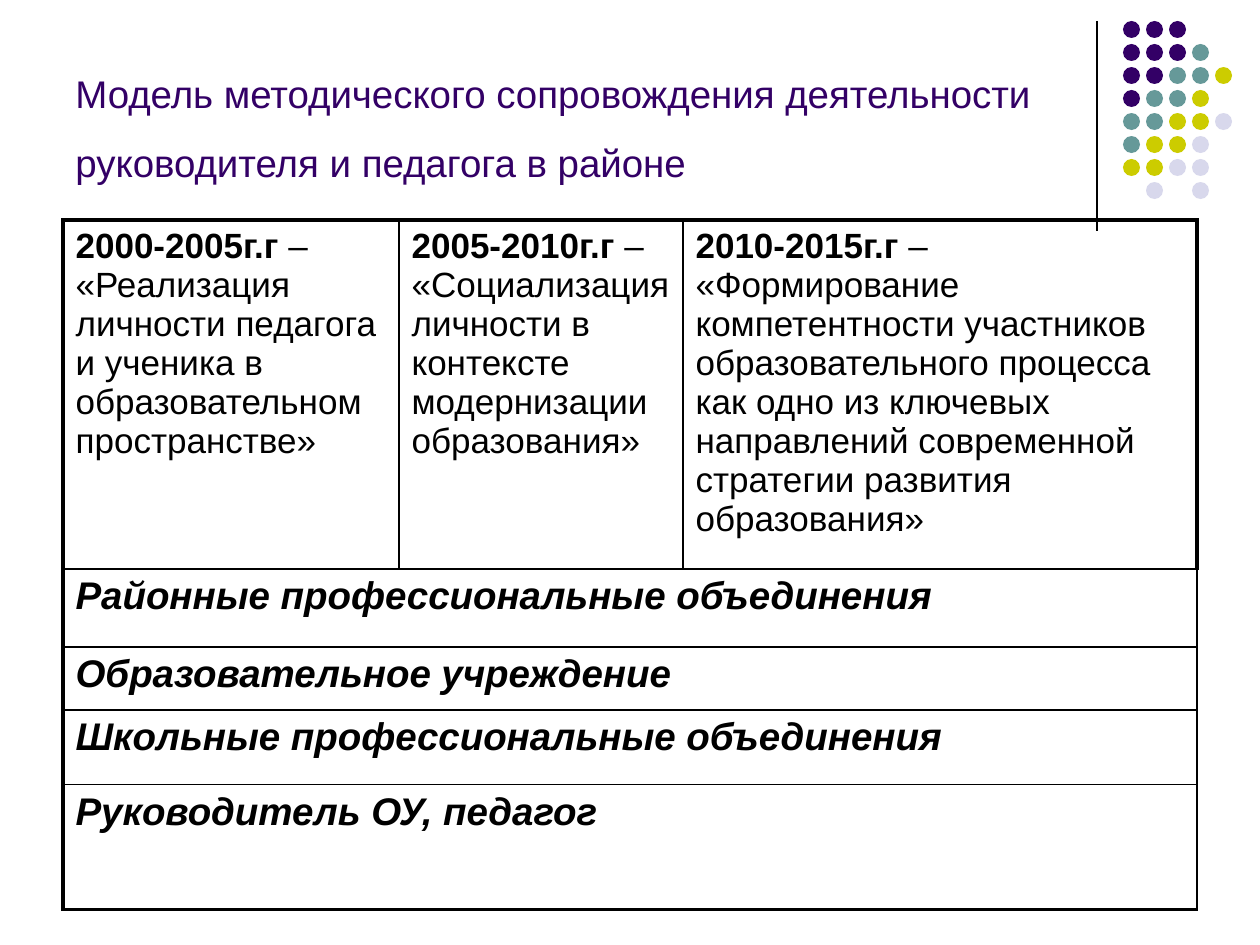
import pptx
import pptx.dml.color
import pptx.enum.shapes
import pptx.enum.text
import pptx.oxml
import pptx.oxml.ns
import pptx.util
from dataclasses import dataclass


@dataclass(frozen=True)
class Theme:
    font: str = "Arial"
    ink: str = "000000"
    title: str = "330066"
    dots: tuple = ("330066", "669999", "CCCC00", "D8D8EC")
    title_size: int = 22
    period_size: int = 20
    level_size: int = 22
    thin: float = 1
    thick: float = 2.25


theme = Theme()
RGB = pptx.dml.color.RGBColor.from_string
Pt = pptx.util.Pt


def px(n):
    """Convert pixels, 126 to the inch, to EMU."""
    return pptx.util.Emu(round(n * 914400 / 126))


def set_borders(cell, widths):
    """Draw the cell borders, widths in points keyed by L, R, T, B."""
    tc_pr = cell._tc.get_or_add_tcPr()
    for i, (side, width) in enumerate(widths.items()):
        tc_pr.insert(i, pptx.oxml.parse_xml(
            f'<a:ln{side} {pptx.oxml.ns.nsdecls("a")} w="{Pt(width)}"><a:solidFill>'
            f'<a:srgbClr val="{theme.ink}"/></a:solidFill></a:ln{side}>'))


prs = pptx.Presentation()
prs.slide_width, prs.slide_height = px(1260), px(945)
s = prs.slides.add_slide(prs.slide_layouts[6])

# Corner ornament: a rule and a field of dots, each digit a colour index
rule = s.shapes.add_connector(pptx.enum.shapes.MSO_CONNECTOR.STRAIGHT,
                              px(1097), px(21), px(1097), px(231))
rule.line.color.rgb = RGB(theme.ink)
rule.line.width = Pt(0.75)
rule._element.spPr.append(pptx.oxml.parse_xml(f'<a:effectLst {pptx.oxml.ns.nsdecls("a")}/>'))

DOT_ROWS = ["000", "0001", "00112", "0112", "11223", "1223", "2233", ".3.3"]
DOT, PITCH = 17, 23
for row, codes in enumerate(DOT_ROWS):
    for col, code in enumerate(codes):
        if code == ".":
            continue
        dot = s.shapes.add_shape(pptx.enum.shapes.MSO_SHAPE.OVAL, px(1123 + col * PITCH),
                                 px(21 + row * PITCH), px(DOT), px(DOT))
        dot.shadow.inherit = False
        dot.fill.solid()
        dot.fill.fore_color.rgb = RGB(theme.dots[int(code)])
        dot.line.fill.background()

# Title
tf = s.shapes.add_textbox(px(63), px(16), px(1040), px(179)).text_frame
tf.word_wrap = True
tf.vertical_anchor = pptx.enum.text.MSO_ANCHOR.BOTTOM
tf.margin_bottom = px(10)
p = tf.paragraphs[0]
p.text = "Модель методического сопровождения деятельности руководителя и педагога в районе"
p.line_spacing = Pt(39.5)
p.font.name = theme.font
p.font.size = Pt(theme.title_size)
p.font.color.rgb = RGB(theme.title)

# Table: periods across the first row, organisational levels below
PERIODS = [
    ("2000-2005г.г", "«Реализация личности педагога и ученика в образовательном пространстве»"),
    ("2005-2010г.г", "«Социализация личности в контексте модернизации образования»"),
    ("2010-2015г.г", "«Формирование компетентности участников образовательного процесса "
                     "как одно из ключевых направлений современной стратегии развития образования»"),
]
LEVELS = [
    "Районные профессиональные объединения",
    "Образовательное учреждение",
    "Школьные профессиональные объединения",
    "Руководитель ОУ, педагог",
]
COLS = [336, 284, 514]
ROWS = [325, 78, 63, 75, 125]

table = s.shapes.add_table(len(ROWS), len(COLS), px(63), px(220),
                           px(sum(COLS)), px(sum(ROWS))).table
table.first_row = table.horz_banding = False
for column, width in zip(table.columns, COLS):
    column.width = px(width)
for table_row, height in zip(table.rows, ROWS):
    table_row.height = px(height)

last_row, last_col = len(ROWS) - 1, len(COLS) - 1
for row in range(len(ROWS)):
    for col in range(len(COLS)):
        cell = table.cell(row, col)
        cell.fill.background()
        edges = {"L": col == 0, "R": col == last_col, "T": row == 0, "B": row == last_row}
        set_borders(cell, {side: theme.thick if outer else theme.thin
                           for side, outer in edges.items()})

for col, (years, topic) in enumerate(PERIODS):
    p = table.cell(0, col).text_frame.paragraphs[0]
    p.font.name = theme.font
    p.font.size = Pt(theme.period_size)
    p.font.color.rgb = RGB(theme.ink)
    for text, bold in ((years, True), (f" – {topic}", False)):
        r = p.add_run()
        r.text = text
        r.font.bold = bold

for row, level in enumerate(LEVELS, start=1):
    cell = table.cell(row, 0)
    cell.merge(table.cell(row, last_col))
    p = cell.text_frame.paragraphs[0]
    p.text = level
    p.font.name = theme.font
    p.font.size = Pt(theme.level_size)
    p.font.bold = p.font.italic = True
    p.font.color.rgb = RGB(theme.ink)

prs.save("out.pptx")
